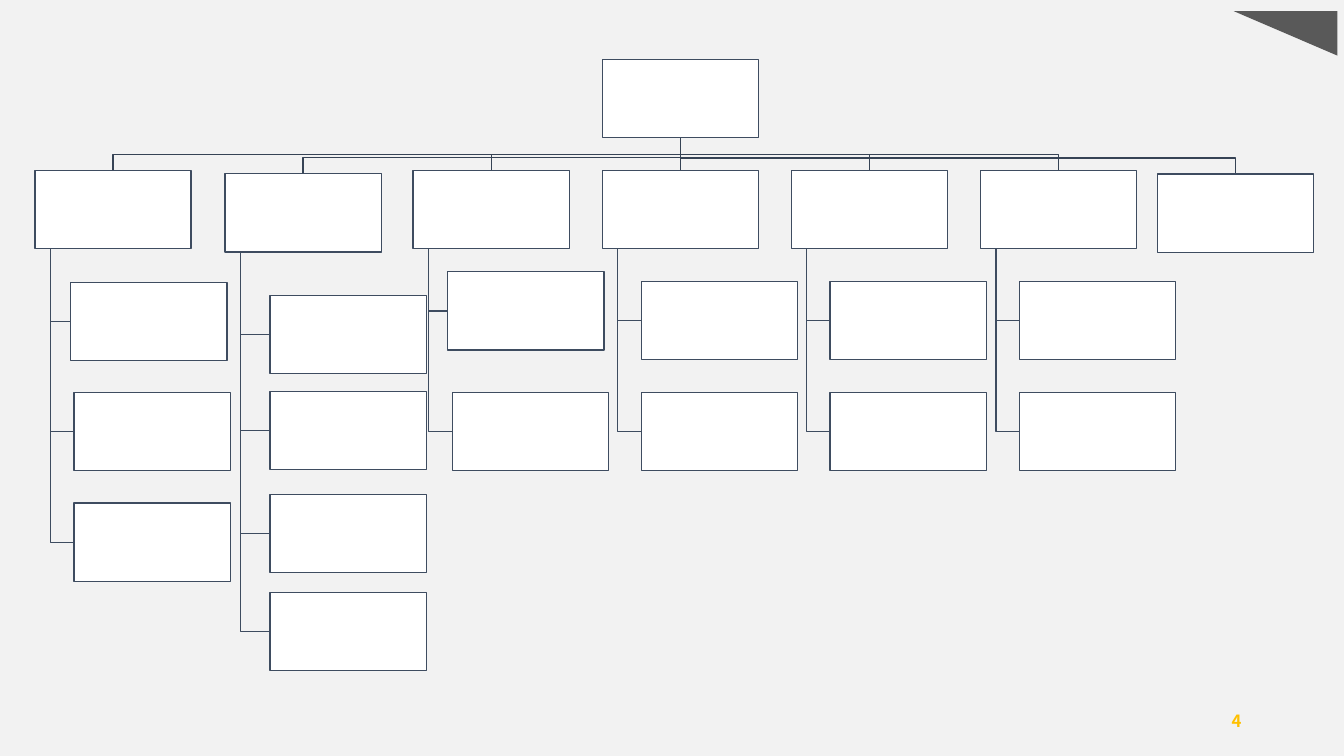
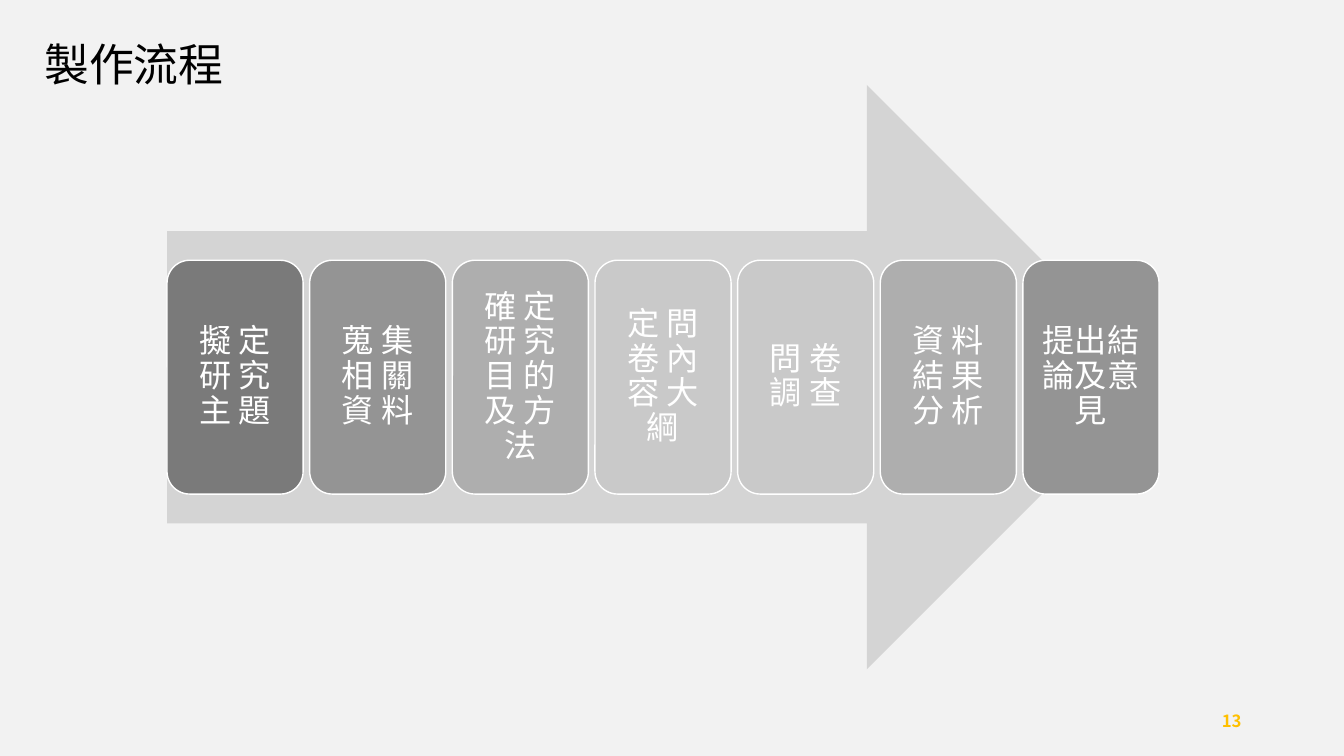
from lxml import etree
from pptx import Presentation
from pptx.dml.color import RGBColor
from pptx.enum import shapes, text
from pptx.oxml import ns
from pptx.util import Cm, Pt

FONT = "Noto Sans CJK SC"
PAPER = RGBColor(0xF2, 0xF2, 0xF2)
WHITE = RGBColor(0xFF, 0xFF, 0xFF)
BLACK = RGBColor(0x00, 0x00, 0x00)
GOLD = RGBColor(0xFF, 0xC0, 0x00)
CORNER = RGBColor(0x59, 0x59, 0x59)
BUS = RGBColor(0x36, 0x43, 0x55)
OUTLINE = RGBColor(0x3E, 0x4C, 0x60)
ARROW = RGBColor(0xD4, 0xD4, 0xD4)
GREYS = [RGBColor(v, v, v) for v in (0x7A, 0x94, 0xAE, 0xC9)]

SLIDE_W, SLIDE_H = 33.87, 19.05
BOX_W, BOX_H = 3.94, 1.97
STEM_INDENT = 0.39
BUS_GAP = 0.41
ROOT = (15.18, 1.5)
BRANCHES = [
    ((0.88, 4.3), [(1.78, 7.12), (1.87, 9.89), (1.87, 12.68)]),
    ((5.67, 4.38), [(6.81, 7.45), (6.81, 9.86), (6.81, 12.46), (6.81, 14.93)]),
    ((10.41, 4.3), [(11.28, 6.85), (11.4, 9.89)]),
    ((15.18, 4.3), [(16.16, 7.09), (16.16, 9.89)]),
    ((19.94, 4.3), [(20.92, 7.09), (20.92, 9.89)]),
    ((24.71, 4.3), [(25.69, 7.09), (25.69, 9.89)]),
    ((29.17, 4.39), []),
]

TITLE = "製作流程"
STEPS = [
    ("擬 定 研 究 主 題", 0),
    ("蒐 集 相 關 資 料", 1),
    ("確 定 研 究 目 的 及 方 法", 2),
    ("定 問 卷 內 容 大 綱", 3),
    ("問 卷 調 查", 3),
    ("資 料 結 果 分 析", 2),
    ("提出結論及意見", 1),
]
ARROW_BOX = (4.21, 2.14, 25, 14.73)
STEP_W = 3.43


def set_line(sp, color):
    sp.line.color.rgb = color
    sp.line.width = Pt(1)


def add_shape(s, kind, left, top, width, height, fill, line=None):
    sp = s.shapes.add_shape(kind, Cm(left), Cm(top), Cm(width), Cm(height))
    sp.shadow.inherit = False
    sp.fill.solid()
    sp.fill.fore_color.rgb = fill
    if line is None:
        sp.line.fill.background()
    else:
        set_line(sp, line)
    return sp


def add_straight(s, start, end, color):
    c = s.shapes.add_connector(shapes.MSO_CONNECTOR.STRAIGHT,
                               *(Cm(v) for v in (*start, *end)))
    set_line(c, color)
    etree.SubElement(c._element.spPr, ns.qn("a:effectLst"))


def add_elbow(s, points, color):
    start, *rest = [(Cm(x), Cm(y)) for x, y in points]
    builder = s.shapes.build_freeform(*start)
    builder.add_line_segments(rest, close=False)
    sp = builder.convert_to_shape()
    sp.shadow.inherit = False
    sp.fill.background()
    set_line(sp, color)


def write(sp, words, size, color, align, anchor, bold=False):
    tf = sp.text_frame
    tf.word_wrap = True
    tf.vertical_anchor = anchor
    tf.text = words
    p = tf.paragraphs[0]
    p.alignment = align
    r = p.runs[0]
    r.font.size = Pt(size)
    r.font.bold = bold
    r.font.color.rgb = color
    r.font.name = FONT
    etree.SubElement(r._r.rPr, ns.qn("a:ea"), typeface=FONT)
    return tf


def add_number(s, number):
    sp = s.shapes.add_textbox(Cm(23.92), Cm(17.65), Cm(7.62), Cm(1.02))
    write(sp, number, 12, GOLD, text.PP_ALIGN.RIGHT, text.MSO_ANCHOR.MIDDLE, True)


def add_box(s, left, top):
    add_shape(s, shapes.MSO_SHAPE.RECTANGLE, left, top, BOX_W, BOX_H, WHITE, OUTLINE)


def add_master_panel(prs, s):
    panel = add_shape(s, shapes.MSO_SHAPE.RECTANGLE, 0, 0, SLIDE_W, SLIDE_H, PAPER)
    prs.slide_master.shapes._spTree.insert(2, panel._element)


def build_org_chart(prs):
    s = prs.slides.add_slide(prs.slide_layouts[6])
    add_master_panel(prs, s)
    corner = add_shape(s, shapes.MSO_SHAPE.RIGHT_TRIANGLE, 31.09, 0.28, 2.61, 1.12, CORNER)
    corner.rotation = 180

    root_x, root_bottom = ROOT[0] + BOX_W / 2, ROOT[1] + BOX_H
    for (left, top), children in BRANCHES:
        center, bus_y = left + BOX_W / 2, top - BUS_GAP
        if center == root_x:
            add_straight(s, (root_x, root_bottom), (center, top), BUS)
        else:
            add_elbow(s, [(root_x, root_bottom), (root_x, bus_y),
                          (center, bus_y), (center, top)], BUS)
        stem = left + STEM_INDENT
        for x, y in children:
            middle = y + BOX_H / 2
            add_elbow(s, [(stem, top + BOX_H), (stem, middle), (x, middle)], OUTLINE)

    add_box(s, *ROOT)
    for branch, children in BRANCHES:
        for spot in [branch, *children]:
            add_box(s, *spot)
    add_number(s, "4")


def build_process(prs):
    s = prs.slides.add_slide(prs.slide_layouts[5])
    title = s.shapes.title
    title.left, title.top, title.width, title.height = Cm(0.86), Cm(0.81), Cm(8.43), Cm(1.63)
    write(title, TITLE, 32, BLACK, text.PP_ALIGN.LEFT, text.MSO_ANCHOR.TOP)

    left, top, width, height = ARROW_BOX
    add_shape(s, shapes.MSO_SHAPE.RIGHT_ARROW, *ARROW_BOX, ARROW)
    step_h = height * 0.4
    step_top = top + (height - step_h) / 2
    pitch = (width - STEP_W) / (len(STEPS) - 1)
    for i, (words, shade) in enumerate(STEPS):
        sp = add_shape(s, shapes.MSO_SHAPE.ROUNDED_RECTANGLE, left + i * pitch,
                       step_top, STEP_W, step_h, GREYS[shade], WHITE)
        tf = write(sp, words, 23, WHITE, text.PP_ALIGN.CENTER, text.MSO_ANCHOR.MIDDLE)
        tf.margin_left = tf.margin_right = tf.margin_top = tf.margin_bottom = Cm(0.25)
        tf.paragraphs[0].line_spacing = 0.9
    add_number(s, "13")


def main():
    prs = Presentation()
    prs.slide_width, prs.slide_height = Cm(SLIDE_W), Cm(SLIDE_H)
    build_org_chart(prs)
    build_process(prs)
    prs.save("out.pptx")


if __name__ == "__main__":
    main()
